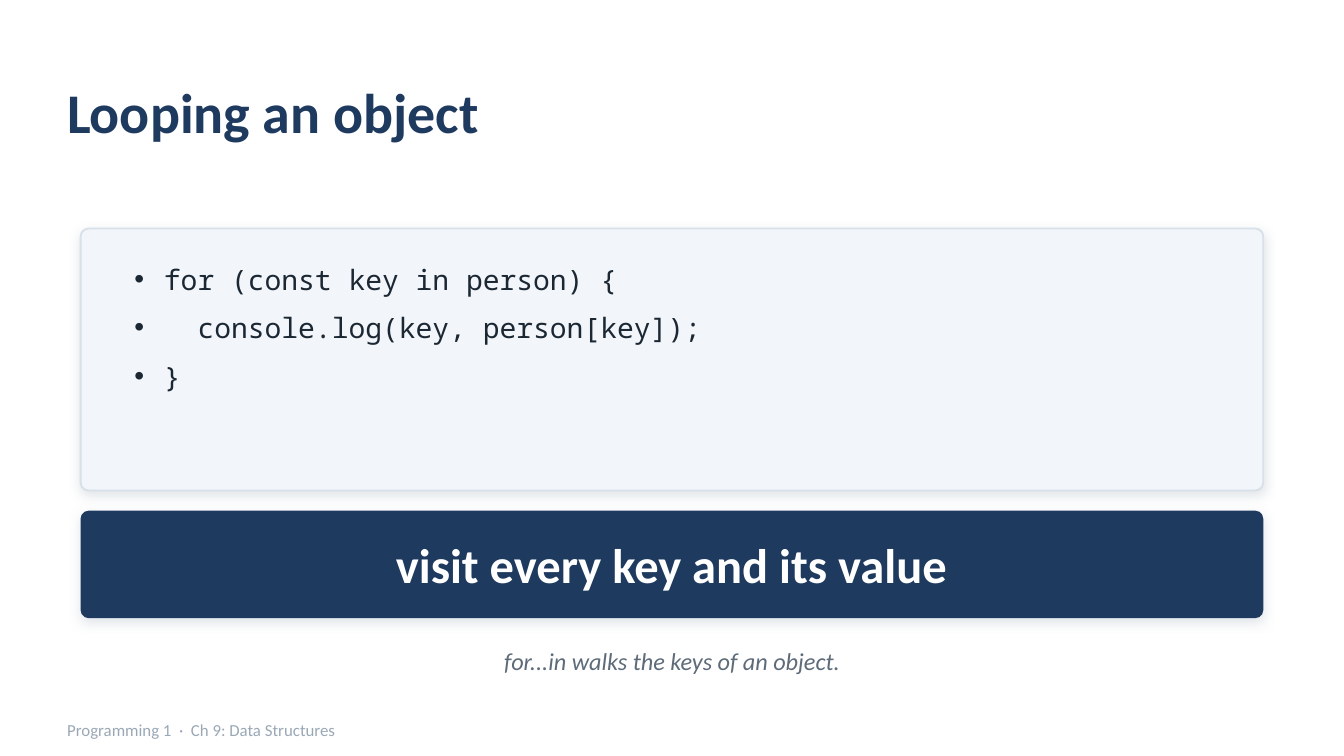
from dataclasses import dataclass
from typing import Optional

from lxml import etree
from pptx import Presentation
from pptx.dml.color import RGBColor
from pptx.enum.shapes import MSO_SHAPE
from pptx.enum.text import MSO_ANCHOR, MSO_AUTO_SIZE, PP_ALIGN
from pptx.oxml.ns import qn
from pptx.util import Inches, Pt

ROUNDED = MSO_SHAPE.ROUNDED_RECTANGLE
TOP, MIDDLE = MSO_ANCHOR.TOP, MSO_ANCHOR.MIDDLE
NO_AUTOFIT = MSO_AUTO_SIZE.NONE
LEFT, CENTER = PP_ALIGN.LEFT, PP_ALIGN.CENTER

SLIDE_WIDTH = Inches(10)
SLIDE_HEIGHT = SLIDE_WIDTH * 9 // 16
COLORS = {
    "navy": "1F3A5F",
    "panel": "F2F5F9",
    "border": "D8E0E9",
    "code": "1B2733",
    "white": "FFFFFF",
    "caption": "5E6B79",
    "muted": "9AA8B6",
}
CORNER_RADIUS = 0.06
CODE_INDENT = 0.22
CODE_LINES = [
    "for (const key in person) {",
    "  console.log(key, person[key]);",
    "}",
]


@dataclass(frozen=True)
class Box:
    left: float
    top: float
    width: float
    height: float

    def lengths(self) -> list:
        return [Inches(v) for v in (self.left, self.top, self.width, self.height)]


@dataclass(frozen=True)
class Card:
    box: Box
    fill: str
    border: Optional[str] = None


@dataclass(frozen=True)
class Label:
    text: str
    box: Box
    size: float
    color: str
    align: PP_ALIGN = LEFT
    bold: bool = False
    italic: bool = False


CODE_CARD = Card(Box(0.6, 1.7, 8.8, 1.95), "panel", "border")
TAKEAWAY_CARD = Card(Box(0.6, 3.8, 8.8, 0.8), "navy")
CODE_BOX = Box(0.9, 1.9, 8.2, 1.6)
TITLE = Label("Looping an object", Box(0.5, 0.4, 9, 0.85), 30, "navy", bold=True)
LABELS = [
    Label("visit every key and its value", Box(0.6, 3.83, 8.8, 0.74), 26,
          "white", CENTER, bold=True),
    Label("for...in walks the keys of an object.", Box(0.6, 4.72, 8.8, 0.4), 13,
          "caption", CENTER, italic=True),
    Label("Programming 1  ·  Ch 9: Data Structures", Box(0.5, 5.3, 8, 0.26), 9,
          "muted"),
]


def rgb(name: str) -> RGBColor:
    return RGBColor.from_string(COLORS[name])


def set_all(target, values: dict) -> None:
    for name, value in values.items():
        setattr(target, name, value)


def place(shape, box: Box) -> None:
    set_all(shape, dict(zip(("left", "top", "width", "height"), box.lengths())))


def add_soft_shadow(shape) -> None:
    shape.shadow.inherit = False
    effects = shape._element.spPr.find(qn("a:effectLst"))
    shadow = etree.SubElement(
        effects, qn("a:outerShdw"), blurRad=str(Pt(6)), dist=str(Pt(2)),
        dir="5400000", algn="bl", rotWithShape="0")
    color = etree.SubElement(shadow, qn("a:srgbClr"), val=COLORS["muted"])
    etree.SubElement(color, qn("a:alpha"), val="28000")


def add_card(slide, card: Card) -> None:
    shape = slide.shapes.add_shape(ROUNDED, *card.box.lengths())
    shape.adjustments[0] = CORNER_RADIUS / card.box.height
    shape.fill.solid()
    shape.fill.fore_color.rgb = rgb(card.fill)
    if card.border:
        shape.line.color.rgb = rgb(card.border)
        shape.line.width = Pt(1)
    else:
        shape.line.fill.background()
    add_soft_shadow(shape)


def write_label(shape, label: Label) -> None:
    frame = shape.text_frame
    set_all(frame, {
        "text": label.text, "word_wrap": True, "auto_size": NO_AUTOFIT,
        "vertical_anchor": MIDDLE, "margin_left": 0, "margin_right": 0,
        "margin_top": 0, "margin_bottom": 0,
    })
    paragraph = frame.paragraphs[0]
    paragraph.alignment = label.align
    font = paragraph.runs[0].font
    set_all(font, {"name": "Calibri", "size": Pt(label.size),
                   "bold": label.bold, "italic": label.italic})
    font.color.rgb = rgb(label.color)


def write_code(shape, lines: list[str]) -> None:
    frame = shape.text_frame
    set_all(frame, {"text": "\n".join(lines), "word_wrap": True,
                    "auto_size": NO_AUTOFIT, "vertical_anchor": TOP})
    for paragraph in frame.paragraphs:
        set_all(paragraph, {"space_before": Pt(0), "space_after": Pt(8),
                            "alignment": LEFT})
        properties = paragraph._p.get_or_add_pPr()
        properties.set("marL", str(Inches(CODE_INDENT)))
        properties.set("indent", str(Inches(-CODE_INDENT)))
        etree.SubElement(properties, qn("a:buChar"), char="•")
        font = paragraph.runs[0].font
        set_all(font, {"name": "Noto Sans Mono", "size": Pt(15)})
        font.color.rgb = rgb("code")


def main() -> None:
    deck = Presentation()
    set_all(deck, {"slide_width": SLIDE_WIDTH, "slide_height": SLIDE_HEIGHT})
    slide = deck.slides.add_slide(deck.slide_layouts[1])

    title, code = slide.shapes.title, slide.placeholders[1]
    place(title, TITLE.box)
    write_label(title, TITLE)

    add_card(slide, CODE_CARD)
    place(code, CODE_BOX)
    write_code(code, CODE_LINES)
    slide.shapes._spTree.append(code._element)  # bring the code above its card

    add_card(slide, TAKEAWAY_CARD)
    for label in LABELS:
        write_label(slide.shapes.add_textbox(*label.box.lengths()), label)

    deck.save("out.pptx")


if __name__ == "__main__":
    main()
